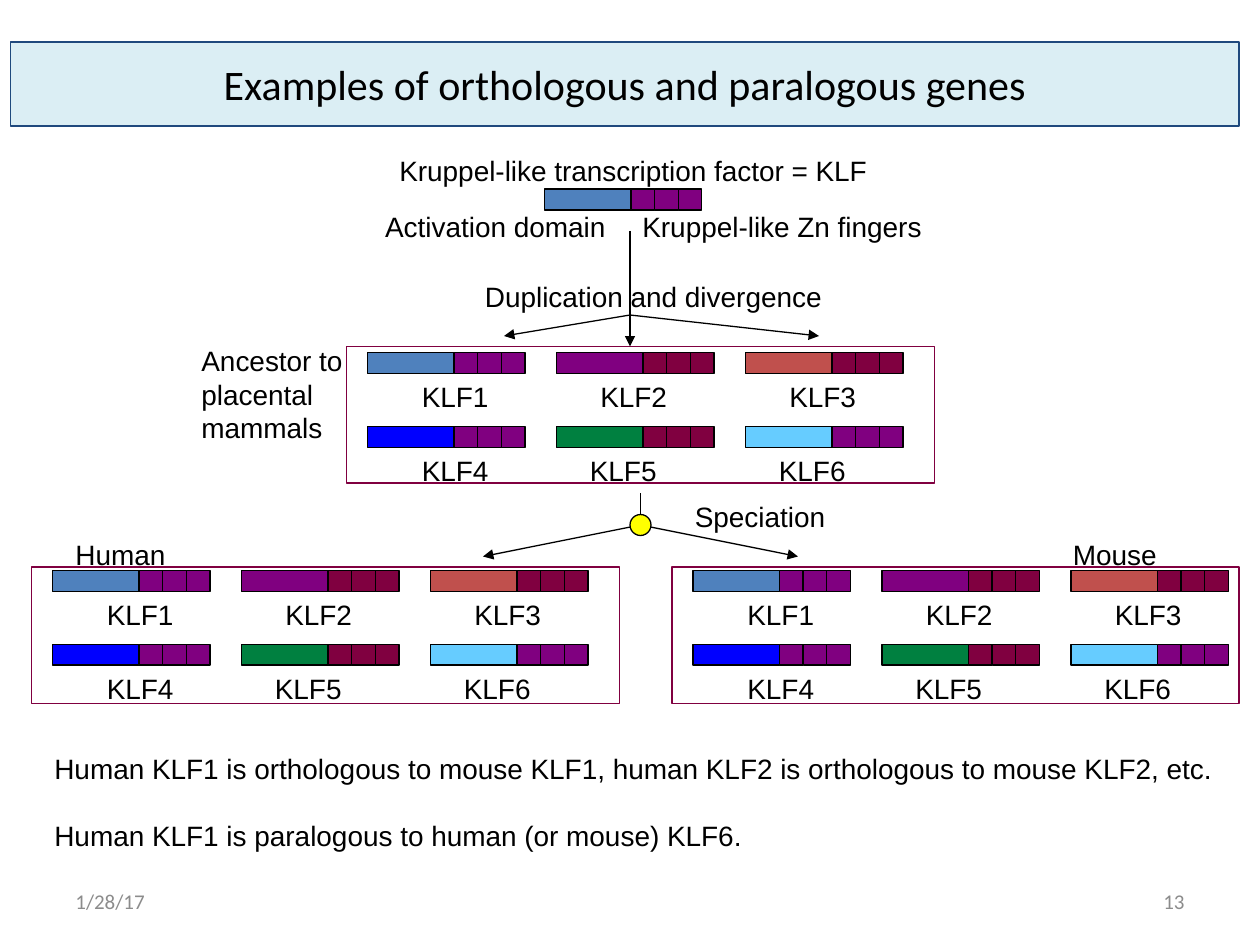
from dataclasses import dataclass

from lxml.etree import SubElement
from pptx import Presentation
from pptx.dml.color import RGBColor
from pptx.enum.shapes import MSO_CONNECTOR, MSO_SHAPE
from pptx.enum.text import MSO_ANCHOR, MSO_AUTO_SIZE, PP_ALIGN
from pptx.oxml.ns import qn
from pptx.util import Emu, Pt

PX = 3810  # 240 px to the inch
BLACK, GREY, PURPLE, MAROON = "000000", "8C8C8C", "800080", "800040"
DOMAIN_W, FINGER_W, GENE_H = 165, 45, 40
GENE_PITCH, ROW_PITCH = 360, 140

BODY = {"name": "Arial", "size": Pt(16)}
TITLE = {"name": "Calibri", "size": Pt(24)}
FOOTER = {"name": "Calibri", "size": Pt(12)}


@dataclass(frozen=True)
class Gene:
    name: str
    domain: str
    fingers: str
    label_dx: int


@dataclass(frozen=True)
class Panel:
    x: int
    y: int
    w: int
    gene_dy: int


@dataclass(frozen=True)
class Label:
    text: str
    x: int
    y: int
    w: int
    h: int = 88


@dataclass(frozen=True)
class Line:
    start: tuple[int, int]
    end: tuple[int, int]
    arrow: bool = True


GENES = [
    Gene("KLF1", "4F81BD", PURPLE, 80),
    Gene("KLF2", PURPLE, MAROON, 60),
    Gene("KLF3", "C0504D", MAROON, 60),
    Gene("KLF4", "0000FF", PURPLE, 80),
    Gene("KLF5", "008040", MAROON, 40),
    Gene("KLF6", "66CCFF", PURPLE, 40),
]
PANELS = [
    Panel(660, 660, 1120, 12),
    Panel(60, 1080, 1120, 7),
    Panel(1280, 1080, 1080, 7),
]
LABELS = [
    Label("Kruppel-like transcription factor = KLF", 737, 281, 943),
    Label("Activation domain", 710, 387, 468),
    Label("Kruppel-like Zn fingers", 1200, 387, 583),
    Label("Duplication and divergence", 900, 520, 691),
    Label("Speciation", 1300, 940, 298),
    Label("Human", 120, 1012, 221),
    Label("Mouse", 2020, 1012, 209),
]
FORK, SPECIATION = (1200, 600), (1220, 1000)
LINES = [
    Line((1200, 440), FORK, arrow=False),
    Line(FORK, (960, 640)),
    Line(FORK, (1200, 660)),
    Line(FORK, (1560, 640)),
    Line((1220, 940), SPECIATION, arrow=False),
    Line(SPECIATION, (920, 1060)),
    Line(SPECIATION, (1520, 1060)),
]


def rgb(color: str) -> RGBColor:
    return RGBColor.from_string(color)


def box(*lengths: int) -> list[Emu]:
    return [Emu(n * PX) for n in lengths]


def paint(sp, fill: str | None, line: str, width: float = 0.75) -> None:
    if fill:
        sp.fill.solid()
        sp.fill.fore_color.rgb = rgb(fill)
    else:
        sp.fill.background()
    sp.line.color.rgb = rgb(line)
    sp.line.width = Pt(width)


def write(p, text: str, fmt: dict, color: str = BLACK) -> None:
    r = p.add_run()
    r.text = text
    for name, value in fmt.items():
        setattr(r.font, name, value)
    r.font.color.rgb = rgb(color)


def add_shape(shapes, kind, bounds: tuple, fill: str | None, line: str) -> None:
    sp = shapes.add_shape(kind, *box(*bounds))
    sp.shadow.inherit = False
    paint(sp, fill, line)


def add_text(shapes, bounds: tuple, lines: list[str], wrap: bool = False, gap: float = 0) -> None:
    tf = shapes.add_textbox(*box(*bounds)).text_frame
    tf.word_wrap = wrap
    tf.auto_size = MSO_AUTO_SIZE.SHAPE_TO_FIT_TEXT
    for i, text in enumerate(lines):
        p = tf.add_paragraph() if i else tf.paragraphs[0]
        if i:
            p.space_before = Pt(gap)
        write(p, text, BODY)


def add_footer(shapes, x: int, text: str, align: PP_ALIGN) -> None:
    tf = shapes.add_textbox(*box(x, 1668, 560, 96)).text_frame
    tf.word_wrap = True
    tf.vertical_anchor = MSO_ANCHOR.MIDDLE
    tf.paragraphs[0].alignment = align
    write(tf.paragraphs[0], text, FOOTER, GREY)


def add_gene(shapes, x: int, y: int, gene: Gene) -> None:
    """Draw an activation domain followed by three zinc fingers."""
    parts = shapes.add_group_shape().shapes
    for i in range(3):
        left = x + DOMAIN_W + i * FINGER_W
        add_shape(parts, MSO_SHAPE.RECTANGLE, (left, y, FINGER_W, GENE_H), gene.fingers, BLACK)
    add_shape(parts, MSO_SHAPE.RECTANGLE, (x, y, DOMAIN_W, GENE_H), gene.domain, BLACK)


def add_panel(shapes, panel: Panel) -> None:
    for i, gene in enumerate(GENES):
        row, col = divmod(i, 3)
        x = panel.x + 40 + col * GENE_PITCH
        y = panel.y + panel.gene_dy + row * ROW_PITCH
        add_gene(shapes, x, y, gene)
        add_text(shapes, (x + gene.label_dx, y + GENE_H, 175, 88), [gene.name])
    add_shape(shapes, MSO_SHAPE.RECTANGLE, (panel.x, panel.y, panel.w, 260), None, MAROON)


def add_line(shapes, line: Line) -> None:
    c = shapes.add_connector(MSO_CONNECTOR.STRAIGHT, *box(*line.start, *line.end))
    c.line.color.rgb = rgb(BLACK)
    c.line.width = Pt(0.75)
    if line.arrow:
        SubElement(c.line._get_or_add_ln(), qn("a:tailEnd"), type="triangle")
    SubElement(c._element.spPr, qn("a:effectLst"))


def add_title(slide, text: str) -> None:
    sp = slide.shapes.title
    sp.left, sp.top, sp.width, sp.height = box(20, 80, 2340, 160)
    paint(sp, "DBEEF4", "1F497D", 1)
    tf = sp.text_frame
    tf.vertical_anchor = MSO_ANCHOR.MIDDLE
    tf.paragraphs[0].alignment = PP_ALIGN.CENTER
    write(tf.paragraphs[0], text, TITLE)


def main() -> None:
    prs = Presentation()
    prs.slide_width, prs.slide_height = box(2400, 1800)
    slide = prs.slides.add_slide(prs.slide_layouts[5])
    shapes = slide.shapes
    add_title(slide, "Examples of orthologous and paralogous genes")
    add_gene(shapes, 1037, 360, GENES[0])
    for panel in PANELS:
        add_panel(shapes, panel)
    for line in LINES:
        add_line(shapes, line)
    add_shape(shapes, MSO_SHAPE.OVAL, (1200, 980, 40, 40), "FFFF00", BLACK)
    for label in LABELS:
        add_text(shapes, (label.x, label.y, label.w, label.h), [label.text])
    add_text(shapes, (80, 1420, 2260, 216), [
        "Human KLF1 is orthologous to mouse KLF1, human KLF2 is orthologous to mouse KLF2, etc.",
        "Human KLF1 is paralogous to human (or mouse) KLF6.",
    ], gap=19.2)
    add_text(shapes, (360, 643, 320, 216), ["Ancestor to", "placental mammals"], wrap=True)
    add_footer(shapes, 120, "1/28/17", PP_ALIGN.LEFT)
    add_footer(shapes, 1720, "13", PP_ALIGN.RIGHT)
    prs.save("out.pptx")


if __name__ == "__main__":
    main()
